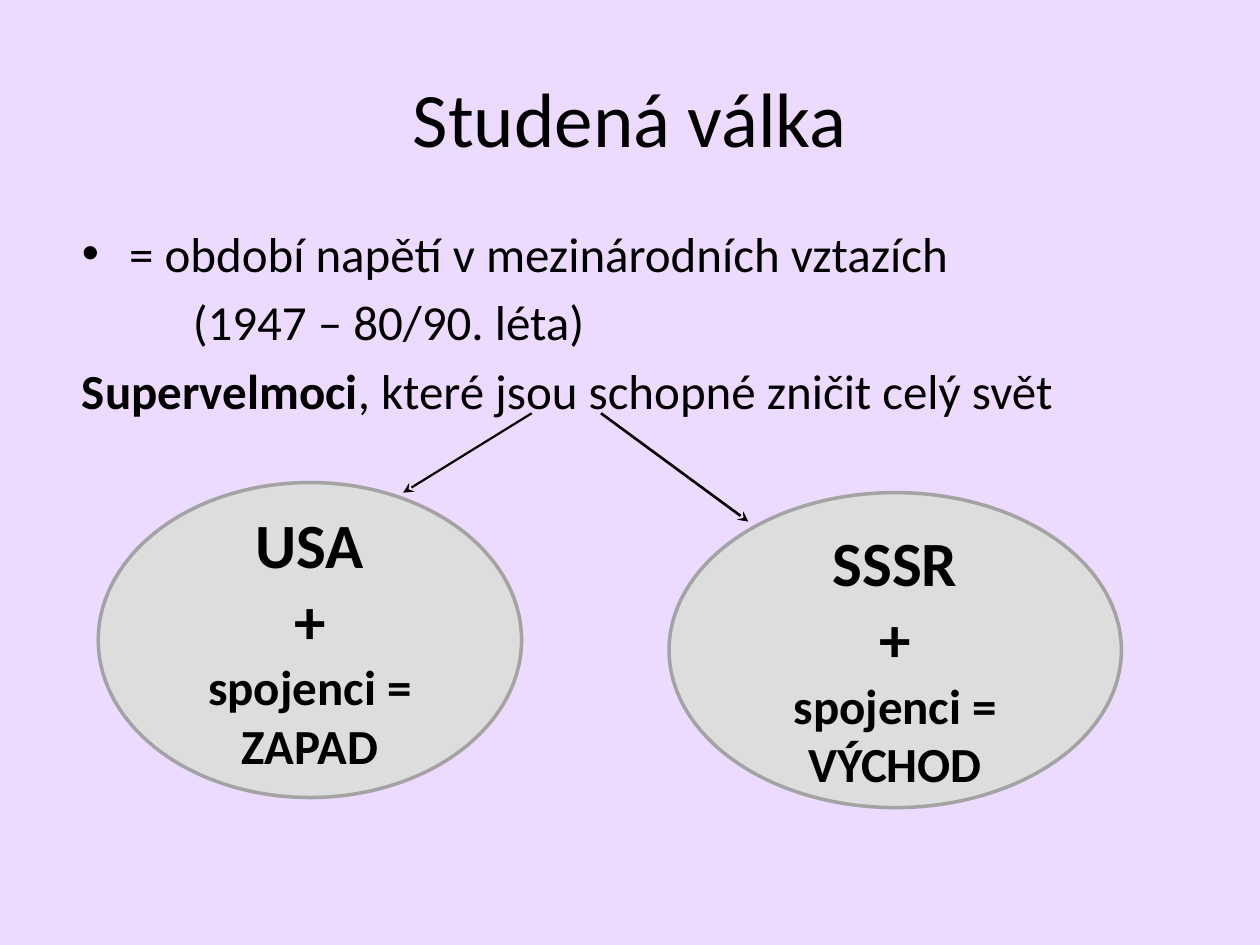
from dataclasses import dataclass

from pptx import Presentation
from pptx.dml.color import RGBColor
from pptx.enum.shapes import MSO_CONNECTOR, MSO_SHAPE
from pptx.enum.text import MSO_ANCHOR, PP_ALIGN
from pptx.oxml.ns import qn
from pptx.util import Inches, Pt
from lxml.etree import SubElement

LILAC = RGBColor(0xED, 0xDA, 0xFF)
GREY = RGBColor(0xDD, 0xDD, 0xDD)
DARK_GREY = RGBColor(0xA3, 0xA3, 0xA3)
BLACK = RGBColor(0, 0, 0)
FONT = "Calibri"


@dataclass
class Bloc:
    left: float
    top: float
    width: float
    height: float
    power: str
    side: str
    text_drop: float = 0  # extra top inset, inches


@dataclass
class Arrow:
    start: tuple[float, float]
    end: tuple[float, float]
    weight: float


BLOCS = [
    Bloc(0.78, 3.83, 3.36, 2.5, "USA", "ZAPAD"),
    Bloc(5.31, 3.91, 3.59, 2.5, "SSSR", "VÝCHOD", text_drop=0.13),
]
ARROWS = [
    Arrow((4.22, 3.28), (3.2, 3.91), 1.25),
    Arrow((4.77, 3.28), (5.94, 4.14), 1.5),
]


def style(p, size: float, bold: bool = False) -> None:
    for r in p.runs:
        r.font.name = FONT
        r.font.size = Pt(size)
        r.font.bold = bold
        r.font.color.rgb = BLACK


def place(sp, left: float, top: float, width: float, height: float) -> None:
    sp.left, sp.top = Inches(left), Inches(top)
    sp.width, sp.height = Inches(width), Inches(height)


def remove_bullet(p, margin: float) -> None:
    """Drop the bullet and start the text at the given margin in inches."""
    pPr = p._p.get_or_add_pPr()
    pPr.set("marL", str(Inches(margin)))
    pPr.set("indent", "0")
    SubElement(pPr, qn("a:buNone"))


def add_bloc(s, bloc: Bloc) -> None:
    sp = s.shapes.add_shape(
        MSO_SHAPE.OVAL, Inches(bloc.left), Inches(bloc.top),
        Inches(bloc.width), Inches(bloc.height))
    sp.shadow.inherit = False
    sp.fill.solid()
    sp.fill.fore_color.rgb = GREY
    sp.line.color.rgb = DARK_GREY
    sp.line.width = Pt(2)
    tf = sp.text_frame
    tf.word_wrap = True
    tf.vertical_anchor = MSO_ANCHOR.MIDDLE
    tf.margin_top = Inches(0.05 + bloc.text_drop)
    tf.text = f"{bloc.power}\n+\nspojenci = {bloc.side}"
    for p, size in zip(tf.paragraphs, (36, 36, 28)):
        p.alignment = PP_ALIGN.CENTER
        style(p, size, bold=True)


def add_arrow(s, arrow: Arrow) -> None:
    points = [Inches(v) for v in (*arrow.start, *arrow.end)]
    line = s.shapes.add_connector(MSO_CONNECTOR.STRAIGHT, *points)
    line.line.color.rgb = BLACK
    line.line.width = Pt(arrow.weight)
    SubElement(line.line._get_or_add_ln(), qn("a:tailEnd"), type="stealth")
    SubElement(line._element.spPr, qn("a:effectLst"))


def add_body(s) -> None:
    body = s.placeholders[1]
    place(body, 0.55, 1.72, 9, 4.95)
    tf = body.text_frame
    tf.text = ("= období napětí v mezinárodních vztazích\n"
               "(1947 – 80/90. léta)\n"
               "Supervelmoci")
    definition, years, powers = tf.paragraphs
    powers.add_run().text = ", které jsou schopné zničit celý svět"
    for p in tf.paragraphs:
        style(p, 28)
    powers.runs[0].font.bold = True
    remove_bullet(years, 0.88)
    remove_bullet(powers, 0)


def main() -> None:
    prs = Presentation()
    prs.slide_width, prs.slide_height = Inches(10), Inches(7.5)
    s = prs.slides.add_slide(prs.slide_layouts[1])
    s.background.fill.solid()
    s.background.fill.fore_color.rgb = LILAC

    title = s.shapes.title
    place(title, 0.5, 0.3, 9, 1.25)
    title.text_frame.text = "Studená válka"
    style(title.text_frame.paragraphs[0], 44)

    add_body(s)
    for bloc in BLOCS:
        add_bloc(s, bloc)
    for arrow in ARROWS:
        add_arrow(s, arrow)
    prs.save("out.pptx")


if __name__ == "__main__":
    main()
